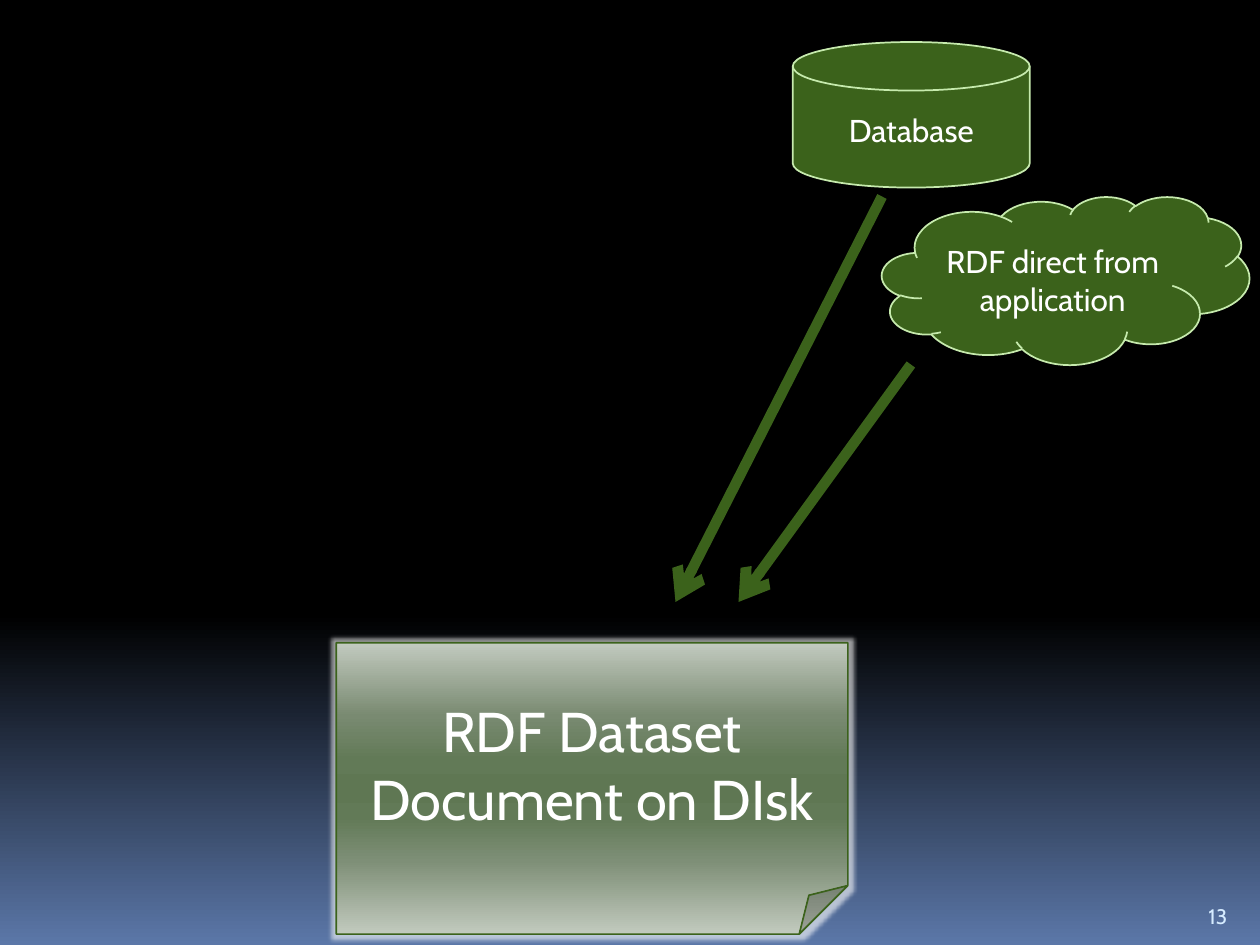
from lxml import etree
from pptx import Presentation
from pptx.dml.color import RGBColor
from pptx.enum.shapes import MSO_CONNECTOR, MSO_SHAPE
from pptx.enum.text import MSO_ANCHOR, PP_ALIGN
from pptx.oxml.ns import qn
from pptx.util import Pt

CENTER = PP_ALIGN.CENTER
MIDDLE, BOTTOM = MSO_ANCHOR.MIDDLE, MSO_ANCHOR.BOTTOM
STRAIGHT = MSO_CONNECTOR.STRAIGHT
CLOUD, DISK = MSO_SHAPE.CLOUD, MSO_SHAPE.FLOWCHART_MAGNETIC_DISK
FOLDED_PAGE = MSO_SHAPE.FOLDED_CORNER

FONT = "Cabin"
COLORS = {
    "green": "3B621B",
    "outline": "C6EAAD",
    "white": "FFFFFF",
    "number": "D6ECFF",
}
BACKGROUND_STOPS = [(0, "000000"), (65, "000000"), (100, "5B77A8")]
PAGE_STOPS = [
    (0, "C2CABF"), (25, "798A71"), (40, "627A57"), (50, "5F7753"),
    (60, "627A57"), (75, "7E8F77"), (100, "C2CABE"),
]


def color(name):
    return RGBColor.from_string(COLORS[name])


def write_text(shape, text, size=18, ink="white", anchor=MIDDLE, bottom_inset=3.6):
    frame = shape.text_frame
    frame.word_wrap = True
    frame.vertical_anchor = anchor
    frame.margin_left = frame.margin_right = Pt(7.2)
    frame.margin_top, frame.margin_bottom = Pt(3.6), Pt(bottom_inset)
    paragraph = frame.paragraphs[0]
    paragraph.alignment = CENTER
    run = paragraph.add_run()
    run.text = text
    run.font.name = FONT
    run.font.size = Pt(size)
    run.font.color.rgb = color(ink)


def fill_downward(owner, fill, stops):
    """Fill with a top-to-bottom gradient of (percent, hex) stops."""
    fill.gradient()
    fill.gradient_angle = 270
    stop_list = owner.element.find(".//" + qn("a:gsLst"))
    for old_stop in list(stop_list):
        stop_list.remove(old_stop)
    for percent, hex_color in stops:
        stop = etree.SubElement(stop_list, qn("a:gs"), pos=str(percent * 1000))
        etree.SubElement(stop, qn("a:srgbClr"), val=hex_color)


def add_outlined(slide, kind, box, outline, width):
    shape = slide.shapes.add_shape(kind, *map(Pt, box))
    shape.shadow.inherit = False
    shape.line.color.rgb = color(outline)
    shape.line.width = Pt(width)
    return shape


def add_source(slide, kind, box, label):
    source = add_outlined(slide, kind, box, "outline", 1)
    source.fill.solid()
    source.fill.fore_color.rgb = color("green")
    write_text(source, label, bottom_inset=0)


def add_document(slide, box, label):
    document = add_outlined(slide, FOLDED_PAGE, box, "green", 0.94)
    fill_downward(document, document.fill, PAGE_STOPS)
    effects = document.element.spPr.find(qn("a:effectLst"))
    glow = etree.SubElement(effects, qn("a:glow"), rad=str(Pt(5)))
    tint = etree.SubElement(glow, qn("a:srgbClr"), val=COLORS["white"])
    etree.SubElement(tint, qn("a:alpha"), val="60000")
    write_text(document, label, size=32)


def add_arrow(slide, start, end):
    arrow = slide.shapes.add_connector(STRAIGHT, *map(Pt, start + end))
    arrow.line.color.rgb = color("green")
    arrow.line.width = Pt(6)
    properties = arrow.element.spPr
    etree.SubElement(properties.find(qn("a:ln")), qn("a:tailEnd"), type="arrow")
    etree.SubElement(properties, qn("a:effectLst"))


def main():
    deck = Presentation()
    deck.slide_width, deck.slide_height = Pt(720), Pt(540)
    slide = deck.slides.add_slide(deck.slide_layouts[6])
    fill_downward(slide, slide.background.fill, BACKGROUND_STOPS)

    # Slide number
    number = slide.shapes.add_textbox(Pt(678), Pt(505.5), Pt(36), Pt(28.8))
    write_text(number, "13", size=12, ink="number", anchor=BOTTOM)

    # Sources of RDF, each with its arrow to the document
    add_arrow(slide, (504, 112.3), (386, 344))
    add_source(slide, CLOUD, (504, 112.3, 210, 96), "RDF direct from application")
    add_source(slide, DISK, (453, 24, 135.4, 83.2), "Database")
    add_arrow(slide, (520.5, 208.3), (422, 344))

    # Target document
    add_document(slide, (192.2, 367.3, 292.3, 166.5), "RDF Dataset Document on DIsk")

    deck.save("out.pptx")


if __name__ == "__main__":
    main()
